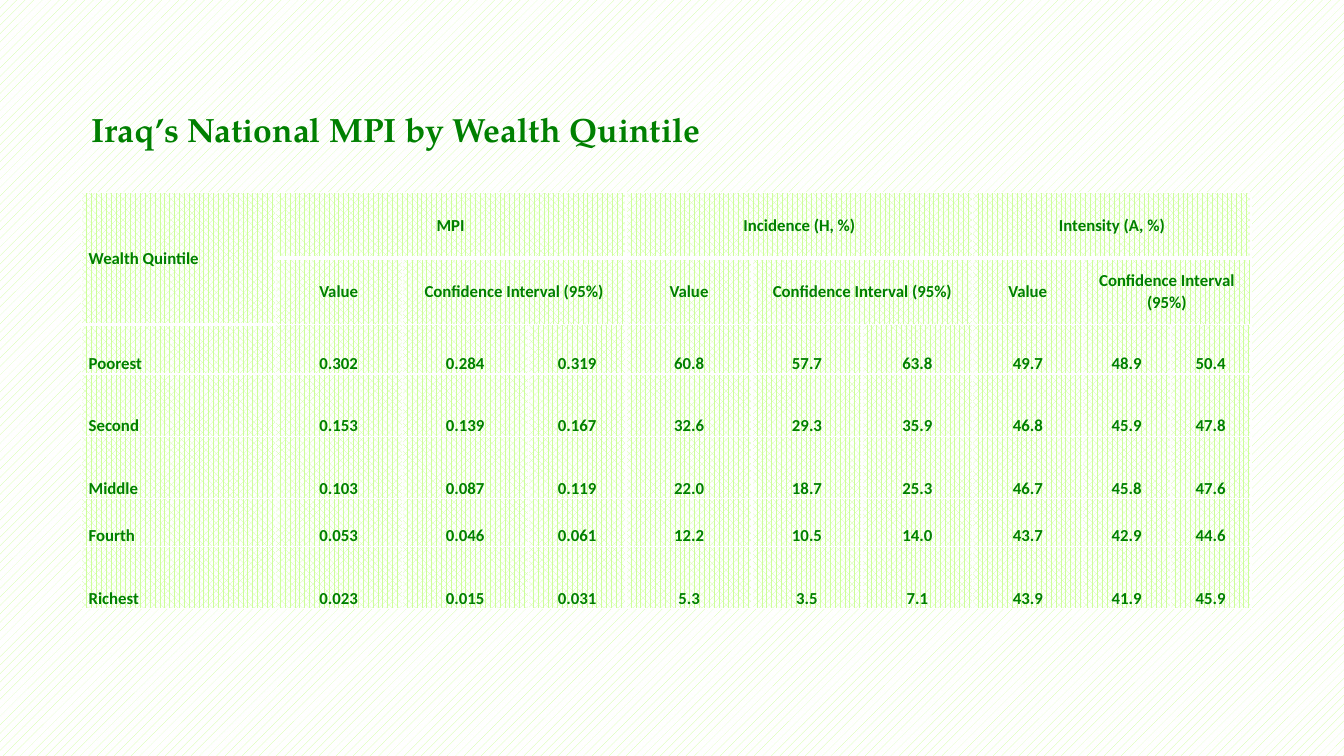
from dataclasses import dataclass

from lxml import etree
from pptx import Presentation
from pptx import util as u
from pptx.dml import color, fill as fills
from pptx.enum import dml, text
from pptx.oxml import ns
from pptx.slide import Slide
from pptx.table import Table, _Cell
from pptx.text import text as runs

GREEN = color.RGBColor(0x00, 0x80, 0x00)
LIME = color.RGBColor(0xCC, 0xFF, 0x99)
WHITE = color.RGBColor(0xFF, 0xFF, 0xFF)

TITLE_FONT = {"name": "TeX Gyre Pagella", "size": u.Pt(24), "bold": True}
TABLE_FONT = {"name": "Calibri", "size": u.Pt(12), "bold": True}
CELL_MARGINS = {
    "margin_left": u.Inches(0.07), "margin_right": u.Inches(0.07),
    "margin_top": 0, "margin_bottom": 0,
}
CELL_SPACING = {"line_spacing": 1.07, "space_after": u.Pt(8)}

COLUMN_WIDTHS = [1.92, 1.26, 1.25, 0.97, 1.25, 1.09, 1.1, 1.09, 0.87, 0.8]
ROW_HEIGHTS = [0.65, 0.66, 0.49, 0.62, 0.62, 0.47, 0.62]
HEADER_ROWS = 2
THIN, THICK = 1, 3


@dataclass
class Header:
    label: str
    row: int
    column: int
    row_span: int = 1
    column_span: int = 1


@dataclass
class Quintile:
    name: str
    values: list[str]


# Each measure covers a value and the two ends of its interval
HEADERS = [Header("Wealth Quintile", 0, 0, row_span=HEADER_ROWS)]
for index, measure in enumerate(["MPI", "Incidence (H, %)", "Intensity (A, %)"]):
    first = 1 + 3 * index
    HEADERS += [
        Header(measure, 0, first, column_span=3),
        Header("Value", 1, first),
        Header("Confidence Interval (95%)", 1, first + 1, column_span=2),
    ]

QUINTILES = [
    Quintile("Poorest", ["0.302", "0.284", "0.319", "60.8", "57.7", "63.8", "49.7", "48.9", "50.4"]),
    Quintile("Second", ["0.153", "0.139", "0.167", "32.6", "29.3", "35.9", "46.8", "45.9", "47.8"]),
    Quintile("Middle", ["0.103", "0.087", "0.119", "22.0", "18.7", "25.3", "46.7", "45.8", "47.6"]),
    Quintile("Fourth", ["0.053", "0.046", "0.061", "12.2", "10.5", "14.0", "43.7", "42.9", "44.6"]),
    Quintile("Richest", ["0.023", "0.015", "0.031", "5.3", "3.5", "7.1", "43.9", "41.9", "45.9"]),
]


def set_format(target: object, values: dict) -> None:
    for name, value in values.items():
        setattr(target, name, value)


def add_span(para: runs._Paragraph, content: str, font: dict) -> None:
    span = para.add_run()
    span.text = content
    set_format(span.font, font)
    span.font.color.rgb = GREEN


def set_pattern(fill: fills.FillFormat, pattern: dml.MSO_PATTERN) -> None:
    fill.patterned()
    fill.pattern = pattern
    fill.fore_color.rgb = LIME
    fill.back_color.rgb = WHITE


def set_borders(cell: _Cell, top: int, bottom: int) -> None:
    properties = cell._tc.get_or_add_tcPr()
    widths = {"lnL": THIN, "lnR": THIN, "lnT": top, "lnB": bottom}
    for position, (side, width) in enumerate(widths.items()):
        line = etree.Element(ns.qn(f"a:{side}"), w=str(u.Pt(width)))
        solid = etree.SubElement(line, ns.qn("a:solidFill"))
        etree.SubElement(solid, ns.qn("a:srgbClr"), val=str(WHITE))
        properties.insert(position, line)


def rule_width(edge: int, column: int) -> int:
    """Width of the line above row number `edge`: thick below the top headers."""
    return THICK if edge == (HEADER_ROWS if column == 0 else 1) else THIN


def write_cell(table: Table, row: int, column: int, content: str) -> None:
    cell = table.cell(row, column)
    is_header = row < HEADER_ROWS
    cell.vertical_anchor = text.MSO_ANCHOR.MIDDLE if is_header else text.MSO_ANCHOR.BOTTOM
    para = cell.text_frame.paragraphs[0]
    set_format(para, CELL_SPACING)
    para.alignment = text.PP_ALIGN.CENTER if column else text.PP_ALIGN.LEFT
    add_span(para, content, TABLE_FONT)


def add_title(page: Slide, content: str) -> None:
    box = page.shapes.add_textbox(u.Inches(0.81), u.Inches(0.78), u.Inches(11.5), u.Inches(1.45))
    frame = box.text_frame
    set_format(frame, {
        "word_wrap": True,
        "vertical_anchor": text.MSO_ANCHOR.MIDDLE,
        "margin_bottom": u.Inches(0.45),
    })
    frame.paragraphs[0].line_spacing = 0.9
    add_span(frame.paragraphs[0], content, TITLE_FONT)


def add_quintile_table(page: Slide) -> None:
    table = page.shapes.add_table(
        len(ROW_HEIGHTS), len(COLUMN_WIDTHS),
        u.Inches(0.81), u.Inches(1.91), u.Inches(11.6), u.Inches(4.11),
    ).table
    table.horz_banding = False
    for column, width in zip(table.columns, COLUMN_WIDTHS):
        column.width = u.Inches(width)
    for row, height in zip(table.rows, ROW_HEIGHTS):
        row.height = u.Inches(height)

    # Cell fills, margins and borders
    for row in range(len(ROW_HEIGHTS)):
        for column in range(len(COLUMN_WIDTHS)):
            cell = table.cell(row, column)
            set_format(cell, CELL_MARGINS)
            set_pattern(cell.fill, dml.MSO_PATTERN.PERCENT_70)
            set_borders(cell, rule_width(row, column), rule_width(row + 1, column))

    # Header labels
    for header in HEADERS:
        last = table.cell(header.row + header.row_span - 1, header.column + header.column_span - 1)
        if header.row_span * header.column_span > 1:
            table.cell(header.row, header.column).merge(last)
        write_cell(table, header.row, header.column, header.label)

    # Quintile figures
    for row, quintile in enumerate(QUINTILES, HEADER_ROWS):
        for column, content in enumerate([quintile.name, *quintile.values]):
            write_cell(table, row, column, content)


def main() -> None:
    deck = Presentation()
    deck.slide_width, deck.slide_height = u.Inches(13.33), u.Inches(7.5)
    page = deck.slides.add_slide(deck.slide_layouts[6])
    set_pattern(page.background.fill, dml.MSO_PATTERN.PERCENT_20)
    add_title(page, "Iraq’s National MPI by Wealth Quintile")
    add_quintile_table(page)
    deck.save("out.pptx")


if __name__ == "__main__":
    main()
